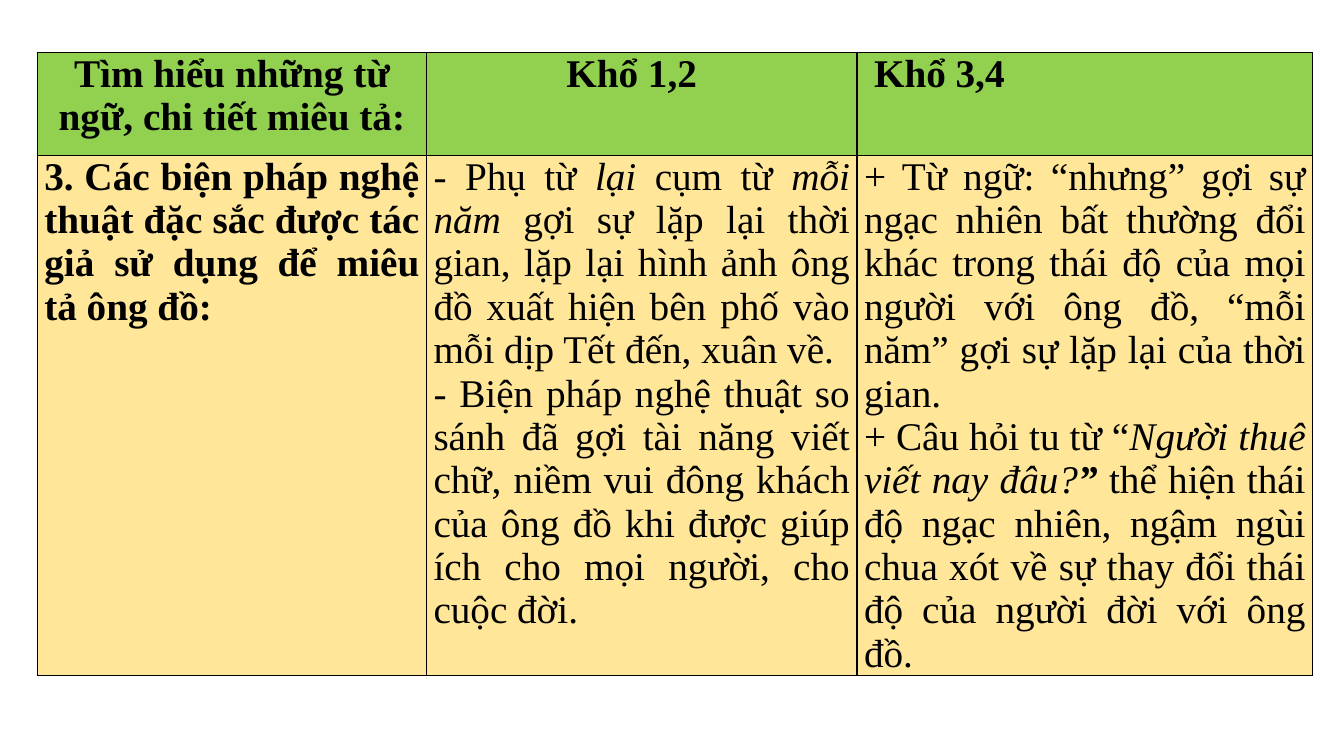
from dataclasses import dataclass

from lxml.etree import SubElement
from pptx import Presentation
from pptx.dml.color import RGBColor
from pptx.enum.text import PP_ALIGN as Align
from pptx.oxml.ns import qn
from pptx.util import Inches, Pt

HEADER_FILL = "92D050"
BODY_FILL = "FFE699"
COLUMN_WIDTHS = [3.86, 4.27, 4.52]
ROW_HEIGHTS = [1.02, 5.16]

HEADERS = [
    ("Tìm hiểu những từ ngữ, chi tiết miêu tả:", Align.CENTER, 0, 0),
    ("Khổ 1,2", Align.CENTER, 0, 0.2),
    ("Khổ 3,4", Align.LEFT, 0.1, 0),
]
TOPIC = [["3. Các biện pháp nghệ thuật đặc sắc được tác giả sử dụng để miêu tả ông đồ:"]]
STANZAS_1_2 = [
    ["- Phụ từ ", ("lại", "i"), " cụm từ ", ("mỗi năm", "i"),
     " gợi sự lặp lại thời gian, lặp lại hình ảnh ông đồ xuất hiện bên phố "
     "vào mỗi dịp Tết đến, xuân về."],
    ["- Biện pháp nghệ thuật so sánh đã gợi tài năng viết chữ, niềm vui đông khách "
     "của ông đồ khi được giúp ích cho mọi người, cho cuộc đời."],
]
STANZAS_3_4 = [
    ["+ Từ ngữ: “nhưng” gợi sự ngạc nhiên bất thường đổi khác trong thái độ của mọi "
     "người với ông đồ, “mỗi năm” gợi sự lặp lại của thời gian."],
    ["+ Câu hỏi tu từ “", ("Người thuê viết nay đâu?", "i"), ("” ", "bi"),
     "thể hiện thái độ ngạc nhiên, ngậm ngùi chua xót về sự thay đổi thái độ của "
     "người đời với ông đồ."],
]


def color(value):
    return RGBColor.from_string(value)


@dataclass
class SlideBuilder:
    slide: object
    font: str = "Times New Roman"
    size: int = 28
    ink: str = "000000"
    margin: float = 0.07

    def table(self, left, top, widths, heights):
        frame = self.slide.shapes.add_table(
            len(heights), len(widths), Inches(left), Inches(top),
            Inches(sum(widths)), Inches(sum(heights)))
        table = frame.table
        for column, width in zip(table.columns, widths):
            column.width = Inches(width)
        for row, height in zip(table.rows, heights):
            row.height = Inches(height)
        return table

    def borders(self, cell):
        properties = cell._tc.get_or_add_tcPr()
        for side in ("lnL", "lnR", "lnT", "lnB"):
            line = SubElement(properties, qn(f"a:{side}"), w=str(Pt(1)))
            fill = SubElement(line, qn("a:solidFill"))
            SubElement(fill, qn("a:srgbClr"), val=self.ink)

    def cell(self, cell, paragraphs, fill, align, bold, indent=0, right=0):
        self.borders(cell)
        cell.fill.solid()
        cell.fill.fore_color.rgb = color(fill)
        cell.margin_left = Inches(self.margin + indent)
        cell.margin_right = Inches(self.margin + right)
        cell.margin_top = cell.margin_bottom = 0
        for index, pieces in enumerate(paragraphs):
            frame = cell.text_frame
            paragraph = frame.add_paragraph() if index else frame.paragraphs[0]
            self.paragraph(paragraph, pieces, align, bold)

    def paragraph(self, paragraph, pieces, align, bold):
        paragraph.alignment = align
        font = paragraph.font
        font.name, font.size, font.bold = self.font, Pt(self.size), bold
        font.color.rgb = color(self.ink)
        for piece in pieces:
            text, style = (piece, "") if isinstance(piece, str) else piece
            run = paragraph.add_run()
            run.text = text
            if "b" in style:
                run.font.bold = True
            if "i" in style:
                run.font.italic = True


def main():
    presentation = Presentation()
    presentation.slide_width = Inches(13.33)
    presentation.slide_height = Inches(7.5)
    builder = SlideBuilder(presentation.slides.add_slide(presentation.slide_layouts[6]))
    table = builder.table(0.37, 0.52, COLUMN_WIDTHS, ROW_HEIGHTS)
    for column, (text, align, indent, right) in enumerate(HEADERS):
        builder.cell(table.cell(0, column), [[text]], HEADER_FILL, align, True, indent, right)
    for column, paragraphs in enumerate([TOPIC, STANZAS_1_2, STANZAS_3_4]):
        builder.cell(table.cell(1, column), paragraphs, BODY_FILL, Align.JUSTIFY, column == 0)
    presentation.save("out.pptx")


if __name__ == "__main__":
    main()
